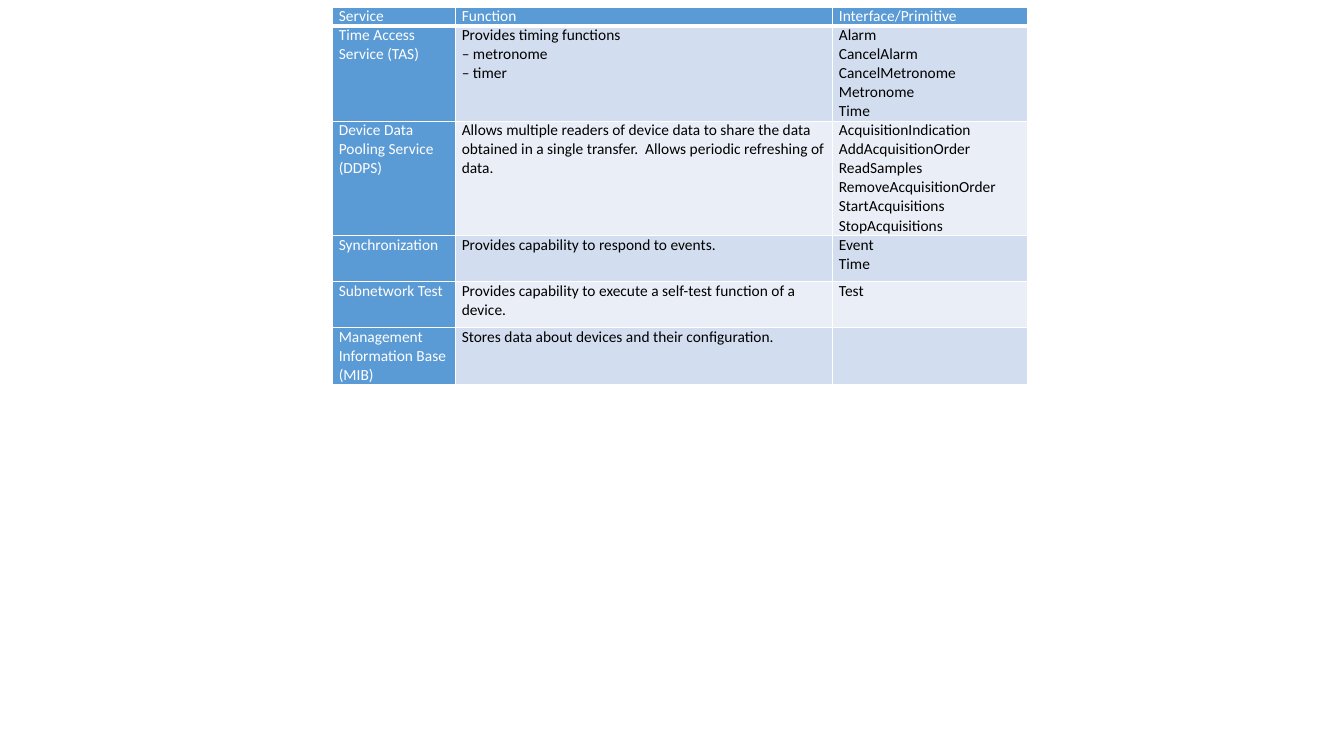
from dataclasses import dataclass

from lxml.etree import SubElement
from pptx import Presentation
from pptx.dml.color import RGBColor
from pptx.oxml.ns import qn
from pptx.table import _Cell
from pptx.util import Inches, Length, Pt

COLORS = {
    "header": "5B9BD5",
    "band_dark": "D2DEEF",
    "band_light": "EAEFF7",
    "light_text": "FFFFFF",
    "dark_text": "000000",
    "border": "FFFFFF",
}
FONT = {"name": "Calibri", "size": Pt(11), "bold": False}
MARGINS = {
    "margin_left": Inches(0.06),
    "margin_right": Inches(0.06),
    "margin_top": 0,
    "margin_bottom": 0,
}

# Percent of the slide's width and height
LEFT, TOP = 24.76, 0.93
COLUMNS = (9.15, 28.06, 14.48)


@dataclass
class ServiceRow:
    height: float
    service: str
    function: str
    primitives: str = ""


ROWS = [
    ServiceRow(2.4, "Service", "Function", "Interface/Primitive"),
    ServiceRow(
        11.87,
        "Time Access Service (TAS)",
        "Provides timing functions\n– metronome\n– timer",
        "Alarm\nCancelAlarm\nCancelMetronome\nMetronome\nTime",
    ),
    ServiceRow(
        14.13,
        "Device Data Pooling Service (DDPS)",
        "Allows multiple readers of device data to share the data obtained "
        "in a single transfer.  Allows periodic refreshing of data.",
        "AcquisitionIndication\nAddAcquisitionOrder\nReadSamples\n"
        "RemoveAcquisitionOrder\nStartAcquisitions\nStopAcquisitions",
    ),
    ServiceRow(
        6.13,
        "Synchronization",
        "Provides capability to respond to events.",
        "Event\nTime",
    ),
    ServiceRow(
        6.13,
        "Subnetwork Test",
        "Provides capability to execute a self-test function of a device.",
        "Test",
    ),
    ServiceRow(
        6.13,
        "Management Information Base (MIB)",
        "Stores data about devices and their configuration.",
    ),
]


def share(percent: float, whole: int) -> Length:
    return Length(round(percent / 100 * whole))


def set_borders(cell: _Cell, bottom: int) -> None:
    """Draw all four sides; bottom is the lower side's width in points."""
    tc_pr = cell._tc.get_or_add_tcPr()
    widths = {"a:lnL": 1, "a:lnR": 1, "a:lnT": 1, "a:lnB": bottom}
    for i, (side, width) in enumerate(widths.items()):
        ln = SubElement(tc_pr, qn(side), w=str(Pt(width)))
        fill = SubElement(ln, qn("a:solidFill"))
        SubElement(fill, qn("a:srgbClr"), val=COLORS["border"])
        tc_pr.insert(i, ln)


def fill_cell(cell: _Cell, text: str, fill: str, color: str) -> None:
    for name, value in MARGINS.items():
        setattr(cell, name, value)
    cell.fill.solid()
    cell.fill.fore_color.rgb = RGBColor.from_string(COLORS[fill])
    cell.text = text
    for p in cell.text_frame.paragraphs:
        for r in p.runs:
            for name, value in FONT.items():
                setattr(r.font, name, value)
            r.font.color.rgb = RGBColor.from_string(COLORS[color])


def main() -> None:
    prs = Presentation()
    prs.slide_width, prs.slide_height = Inches(13.33), Inches(7.5)
    width, height = prs.slide_width, prs.slide_height
    s = prs.slides.add_slide(prs.slide_layouts[6])

    table = s.shapes.add_table(
        len(ROWS),
        len(COLUMNS),
        share(LEFT, width),
        share(TOP, height),
        share(sum(COLUMNS), width),
        share(sum(row.height for row in ROWS), height),
    ).table
    table.first_row = table.horz_banding = False
    for column, percent in zip(table.columns, COLUMNS):
        column.width = share(percent, width)

    for i, row in enumerate(ROWS):
        table.rows[i].height = share(row.height, height)
        band = "band_dark" if i % 2 else "band_light"
        for j, text in enumerate((row.service, row.function, row.primitives)):
            is_header = i == 0 or j == 0
            cell = table.cell(i, j)
            fill_cell(
                cell,
                text,
                "header" if is_header else band,
                "light_text" if is_header else "dark_text",
            )
            set_borders(cell, bottom=3 if i == 0 else 1)

    prs.save("out.pptx")


if __name__ == "__main__":
    main()
